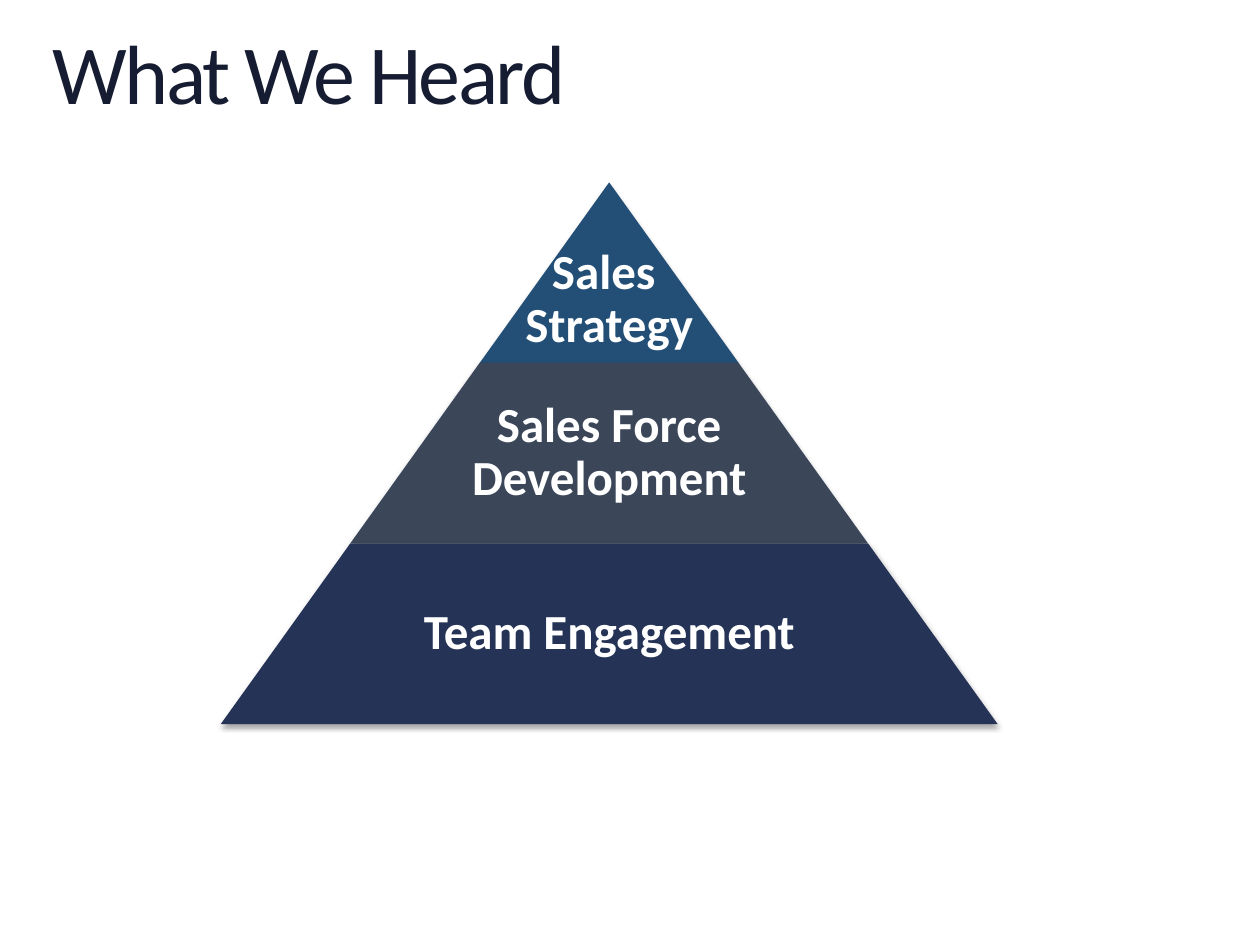
from dataclasses import dataclass

from lxml import etree
from pptx import Presentation
from pptx.dml.color import RGBColor
from pptx.enum import shapes, text
from pptx.oxml import ns
from pptx.util import Pt


@dataclass(frozen=True)
class Theme:
    font: str = "Calibri"
    title_size: float = 48
    label_size: float = 28
    title_color: str = "161D32"
    label_color: str = "FFFFFF"
    line_spacing: float = 0.9


@dataclass(frozen=True)
class Tier:
    lines: tuple[str, ...]
    fill: str
    label_share: float  # label width as a share of the tier's base
    top_inset: float = 3


THEME = Theme()
TIERS = (
    Tier(("Sales ", "Strategy"), "234F77", 1, top_inset=34),
    Tier(("Sales Force Development",), "3B4759", 0.65),
    Tier(("Team Engagement",), "253356", 0.65),
)

# Pyramid geometry: each tier is one step wider than the tier above
CENTER_X, APEX_Y = 348.1, 104.2
TIER_HEIGHT, WIDTH_STEP = 103.2, 148


def apply(target, values: dict) -> None:
    for key, value in values.items():
        setattr(target, key, value)


def write_lines(frame, lines: tuple[str, ...], align, font_format: dict, color: str) -> None:
    for index, line in enumerate(lines):
        paragraph = frame.add_paragraph() if index else frame.paragraphs[0]
        apply(paragraph, {"alignment": align, "line_spacing": THEME.line_spacing})
        run = paragraph.add_run()
        run.text = line
        apply(run.font, {"name": THEME.font, **font_format})
        run.font.color.rgb = RGBColor.from_string(color)


def add_soft_shadow(shape) -> None:
    shape.shadow.inherit = False
    effects = shape._element.spPr.find(ns.qn("a:effectLst"))
    shadow = etree.SubElement(
        effects, ns.qn("a:outerShdw"), blurRad=str(Pt(3.1)), dist=str(Pt(1.8)),
        dir="5400000", rotWithShape="0")
    color = etree.SubElement(shadow, ns.qn("a:srgbClr"), val="000000")
    etree.SubElement(color, ns.qn("a:alpha"), val="35000")


def add_tier(slide, tier: Tier, level: int) -> None:
    width = WIDTH_STEP * (level + 1)
    top = APEX_Y + TIER_HEIGHT * level

    # Sloping band
    band = slide.shapes.add_shape(
        shapes.MSO_SHAPE.TRAPEZOID, Pt(CENTER_X - width / 2), Pt(top), Pt(width), Pt(TIER_HEIGHT))
    band.adjustments[0] = WIDTH_STEP / 2 / TIER_HEIGHT
    band.fill.solid()
    band.fill.fore_color.rgb = RGBColor.from_string(tier.fill)
    band.line.fill.background()
    add_soft_shadow(band)

    # Label centred on the band
    label_width = width * tier.label_share
    label = slide.shapes.add_textbox(
        Pt(CENTER_X - label_width / 2), Pt(top), Pt(label_width), Pt(TIER_HEIGHT)).text_frame
    apply(label, {
        "word_wrap": True, "vertical_anchor": text.MSO_ANCHOR.MIDDLE,
        "margin_left": Pt(3), "margin_right": Pt(3),
        "margin_top": Pt(tier.top_inset), "margin_bottom": Pt(3),
    })
    write_lines(label, tier.lines, text.PP_ALIGN.CENTER,
                {"size": Pt(THEME.label_size), "bold": True}, THEME.label_color)


def add_title(slide, heading: str) -> None:
    title = slide.shapes.title
    apply(title, {"left": Pt(30), "top": Pt(18), "width": Pt(660), "height": Pt(52.6)})
    frame = title.text_frame
    apply(frame, {
        "word_wrap": True, "auto_size": text.MSO_AUTO_SIZE.NONE,
        "vertical_anchor": text.MSO_ANCHOR.TOP,
        "margin_left": 0, "margin_right": 0, "margin_top": 0, "margin_bottom": 0,
    })
    write_lines(frame, (heading,), text.PP_ALIGN.LEFT,
                {"size": Pt(THEME.title_size)}, THEME.title_color)
    # Tightened letter spacing, in hundredths of a point
    frame.paragraphs[0].runs[0].font._element.set("spc", "-150")


def main() -> None:
    deck = Presentation()
    apply(deck, {"slide_width": Pt(720), "slide_height": Pt(540)})
    slide = deck.slides.add_slide(deck.slide_layouts[5])
    add_title(slide, "What We Heard")
    for level, tier in enumerate(TIERS):
        add_tier(slide, tier, level)
    deck.save("out.pptx")


if __name__ == "__main__":
    main()
